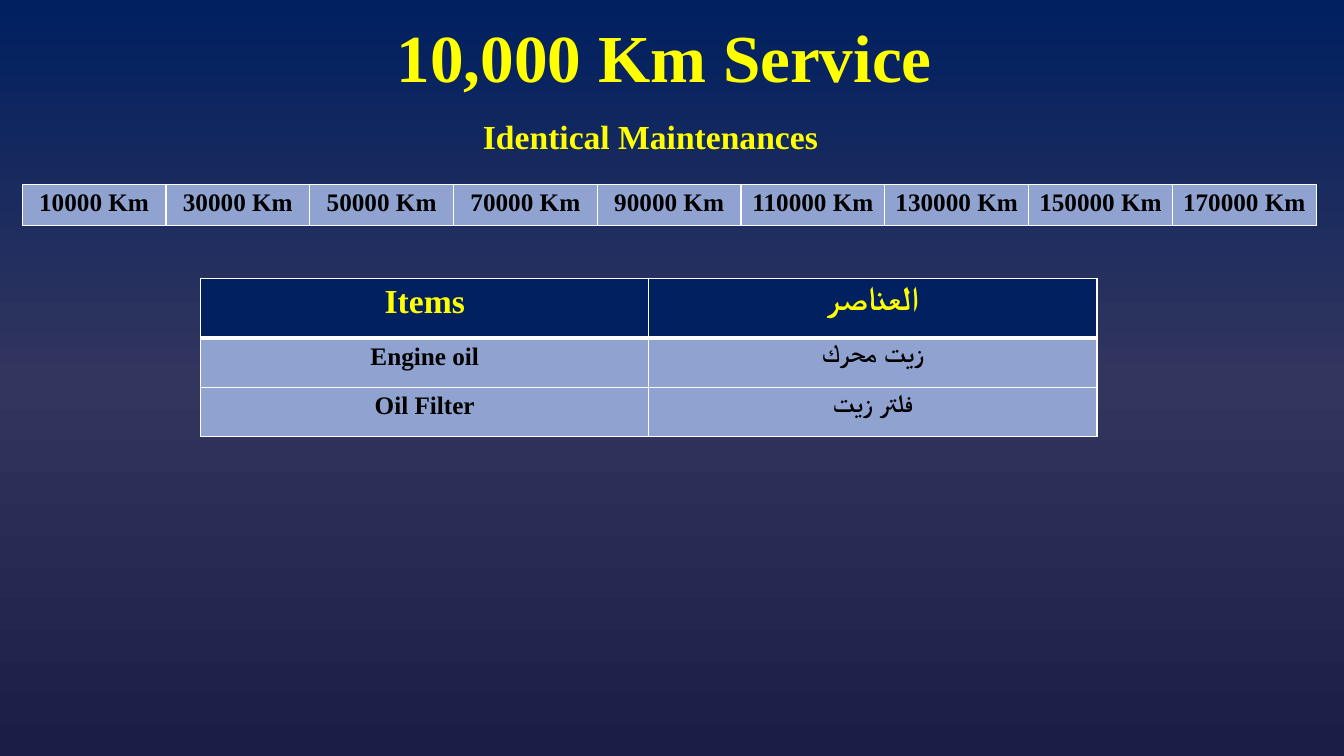
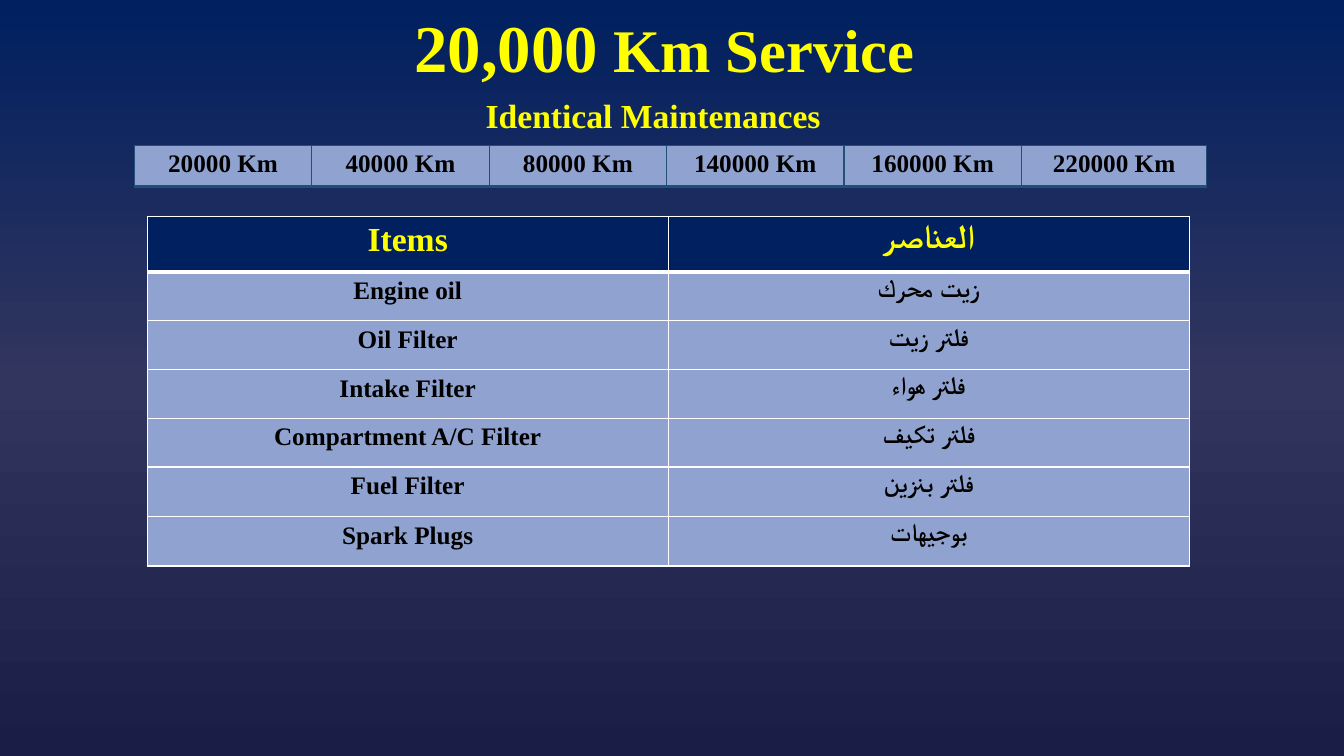
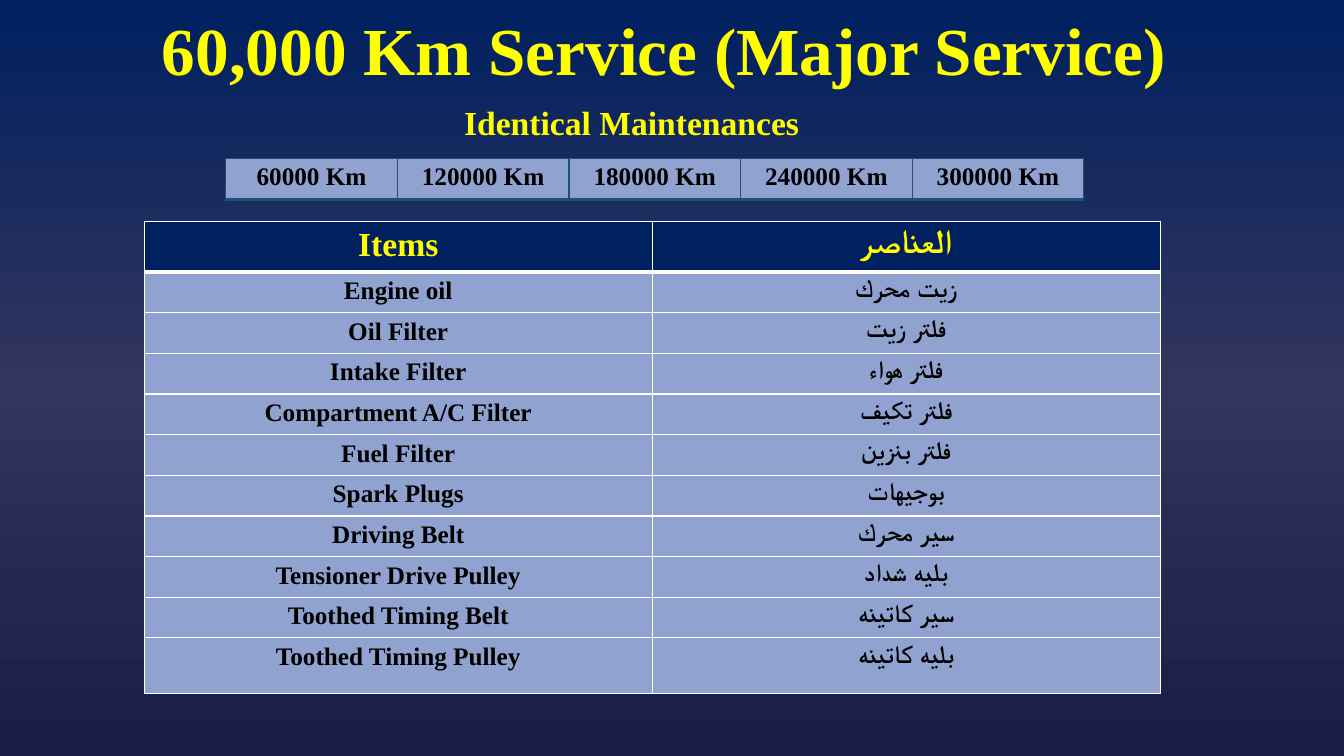
from dataclasses import dataclass

from lxml.etree import SubElement
from pptx import Presentation
from pptx.dml.color import RGBColor
from pptx.enum.text import MSO_ANCHOR as Anchor, PP_ALIGN as Align
from pptx.oxml.ns import qn
from pptx.util import Inches, Pt


@dataclass(frozen=True)
class Theme:
    # Colours
    backdrop: tuple = ((0, "002060"), (50, "32355E"), (100, "1A1E47"))
    accent: str = "FFFF00"
    ink: str = "000000"
    header: str = "002060"
    cell: str = "90A2CF"
    white: str = "FFFFFF"
    steel: str = "224F76"
    # Type
    font: str = "Times New Roman"
    arabic_font: str = "Calibri"
    title_size: float = 48
    heading_size: float = 24
    body_size: float = 18


THEME = Theme()
WIDTH, HEIGHT = Inches(13.33), Inches(7.5)
STRIP_ROW = 5.47

# Service items, in the order in which the longer services add them
PARTS = [
    ("Engine oil", "زيت محرك"),
    ("Oil Filter", "فلتر زيت"),
    ("Intake Filter", "فلتر هواء"),
    ("Compartment A/C Filter", "فلتر تكيف"),
    ("Fuel Filter", "فلتر بنزين"),
    ("Spark Plugs", "بوجيهات"),
    ("Driving Belt", "سير محرك"),
    ("Tensioner Drive Pulley", "بليه شداد"),
    ("Toothed Timing Belt", "سير كاتينه"),
    ("Toothed Timing Pulley", "بليه كاتينه"),
]


# Grid: 100 columns by 100 rows over the slide
def across(columns):
    return round(WIDTH * columns / 100)


def down(rows):
    return round(HEIGHT * rows / 100)


def set_backdrop(master):
    fill = master.background.fill
    fill.gradient()
    fill.gradient_angle = 270
    stops = next(master.element.iter(qn("a:gsLst")))
    stops.clear()
    for share, colour in THEME.backdrop:
        stop = SubElement(stops, qn("a:gs"), pos=str(share * 1000))
        SubElement(stop, qn("a:srgbClr"), val=colour)


# Text
def add_run(paragraph, text, size, colour, font=THEME.font):
    run = paragraph.add_run()
    run.text = text
    run.font.name = font
    run.font.size = Pt(size)
    run.font.bold = True
    run.font.color.rgb = RGBColor.from_string(colour)


def add_line(slide, box, runs, anchor=Anchor.TOP, spacing=1.0):
    left, top, width, height = box
    shape = slide.shapes.add_textbox(across(left), down(top), across(width), down(height))
    frame = shape.text_frame
    frame.word_wrap = True
    frame.vertical_anchor = anchor
    paragraph = frame.paragraphs[0]
    paragraph.alignment = Align.CENTER
    paragraph.line_spacing = spacing
    for text, size in runs:
        add_run(paragraph, text, size, THEME.accent)


def add_title(slide, height, runs):
    add_line(slide, (6.3, 1.33, 86.25, height), runs, Anchor.MIDDLE, 0.9)


def add_subtitle(slide, left, top):
    add_line(slide, (left, top, 41, 6.7), [("Identical Maintenances", THEME.heading_size)])


# Tables
def add_grid(slide, left, top, columns, rows):
    frame = slide.shapes.add_table(
        len(rows), len(columns), across(left), down(top), across(sum(columns)), down(sum(rows)))
    table = frame.table
    table.horz_banding = False
    for column, width in zip(table.columns, columns):
        column.width = across(width)
    for row, height in zip(table.rows, rows):
        row.height = down(height)
    return table


def fill_cell(cell, text, size, ink, fill, edges, font=THEME.font):
    properties = cell._tc.get_or_add_tcPr()
    for side, (colour, width) in edges.items():
        line = SubElement(properties, qn("a:ln" + side), w=str(Pt(width)))
        SubElement(SubElement(line, qn("a:solidFill")), qn("a:srgbClr"), val=colour)
    cell.fill.solid()
    cell.fill.fore_color.rgb = RGBColor.from_string(fill)
    paragraph = cell.text_frame.paragraphs[0]
    paragraph.alignment = Align.CENTER
    add_run(paragraph, text, size, ink, font)


def add_distance_strip(slide, left, top, columns, distances, line, bottom):
    table = add_grid(slide, left, top, columns, [STRIP_ROW])
    table.first_row = False
    edges = {"L": (line, 1), "R": (line, 1), "T": (line, 1), "B": (line, bottom)}
    for cell, distance in zip(table.rows[0].cells, distances):
        fill_cell(cell, f"{distance} Km", THEME.body_size, THEME.ink, THEME.cell, edges)


def add_items_table(slide, left, top, width, rows, arabic_font=THEME.font):
    table = add_grid(slide, left, top, [width / 2] * 2, rows)
    thin = (THEME.white, 1)
    sides = {"L": thin, "R": thin}
    header = (THEME.heading_size, THEME.accent, THEME.header,
              {**sides, "T": thin, "B": (THEME.white, 3)})
    body = (THEME.body_size, THEME.ink, THEME.cell, {**sides, "B": thin})
    for index, (row, texts) in enumerate(zip(table.rows, [("Items", "العناصر")] + PARTS)):
        style = body if index else header
        for cell, text, font in zip(row.cells, texts, (THEME.font, arabic_font)):
            fill_cell(cell, text, *style, font)


def main():
    presentation = Presentation()
    presentation.slide_width, presentation.slide_height = WIDTH, HEIGHT
    set_backdrop(presentation.slide_master)
    blank = presentation.slide_layouts[6]

    # 10,000 Km service
    slide = presentation.slides.add_slide(blank)
    add_title(slide, 13.33, [("10,000 Km Service", THEME.title_size)])
    add_distance_strip(slide, 1.65, 24.4, [10.7] * 9, range(10000, 180000, 20000), THEME.white, 1)
    add_subtitle(slide, 27.9, 14.67)
    add_items_table(slide, 14.93, 36.8, 66.7, [7.87] + [6.55] * 2)

    # 20,000 Km service
    slide = presentation.slides.add_slide(blank)
    add_title(slide, 10.67, [("20,000", 47.7), (" Km Service", 43.2)])
    add_distance_strip(slide, 10, 19.2, [13.2] * 5 + [13.8],
                       [20000, 40000, 80000, 140000, 160000, 220000], THEME.steel, 2)
    add_subtitle(slide, 28.1, 11.87)
    add_items_table(slide, 10.95, 28.6, 77.55, [7.4] + [6.45] * 4 + [6.55] * 2)

    # 60,000 Km service
    slide = presentation.slides.add_slide(blank)
    add_title(slide, 11.47, [("60,000 Km Service (Major Service)", THEME.title_size)])
    add_distance_strip(slide, 16.8, 20.93, [12.77] * 5, range(60000, 300001, 60000),
                       THEME.steel, 2)
    add_subtitle(slide, 26.5, 12.8)
    add_items_table(slide, 10.73, 29.33, 75.6, [6.6] + [5.38] * 9 + [7.4], THEME.arabic_font)

    presentation.save("out.pptx")


if __name__ == "__main__":
    main()
